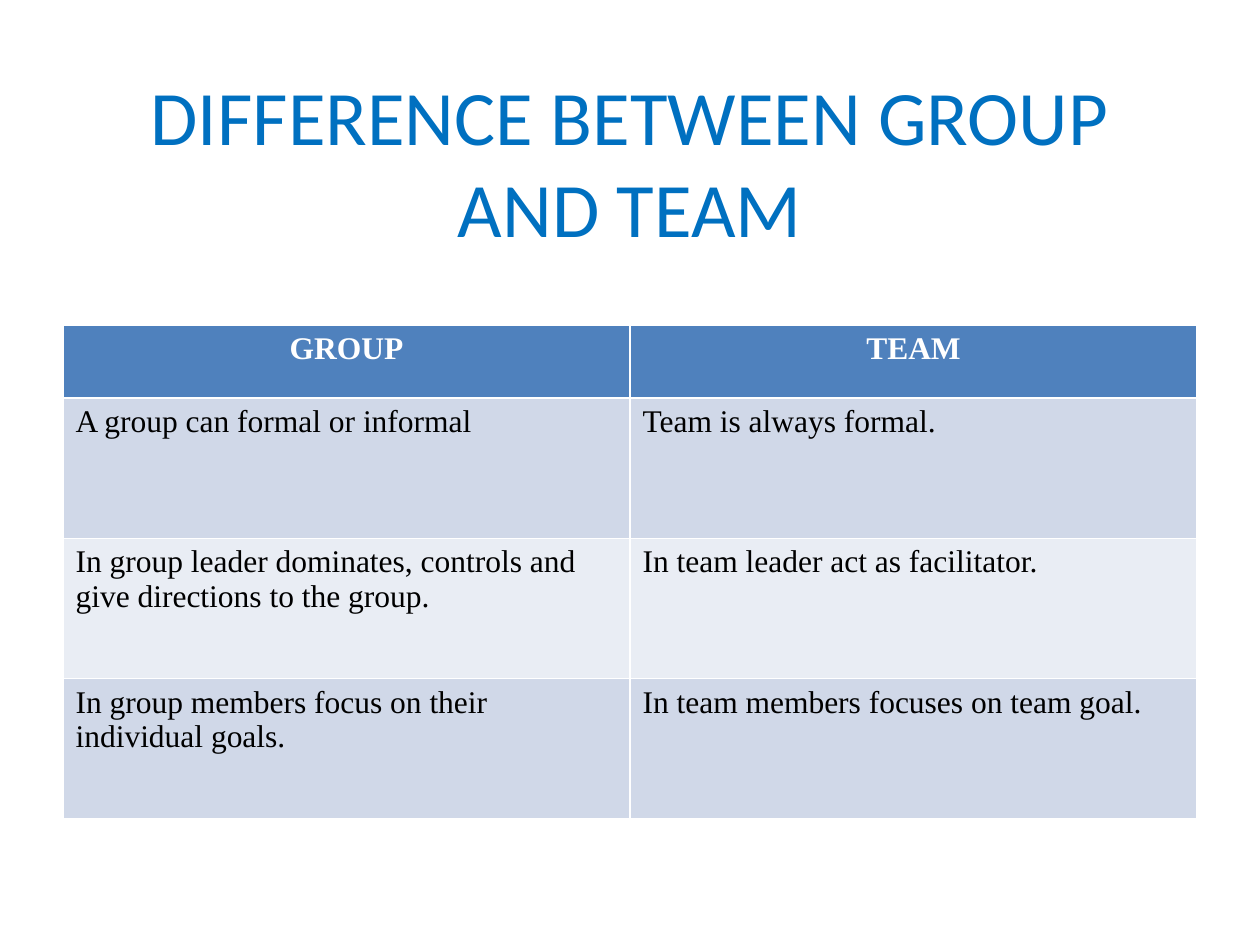
from pptx import Presentation
from pptx.dml.color import RGBColor
from pptx.enum import text
from pptx.util import Inches, Pt

COLORS = {
    "title": "0070C0",
    "header": "4F81BD",
    "header_text": "FFFFFF",
    "body_text": "000000",
    "odd_band": "D0D8E8",
    "even_band": "E9EDF4",
}
ROWS = [
    ("GROUP", "TEAM"),
    ("A group can formal or informal", "Team is always formal."),
    ("In group leader dominates, controls and give directions to the group.",
     "In team leader act as facilitator."),
    ("In group members focus on their individual goals.",
     "In team members focuses on team goal."),
]
HEADER_HEIGHT = Inches(0.58)


def style_paragraph(paragraph, font_name, size, color, bold=False, centered=False):
    """Set the font and alignment of a paragraph."""
    font = paragraph.font
    font.name, font.size, font.bold = font_name, Pt(size), bold
    font.color.rgb = RGBColor.from_string(COLORS[color])
    paragraph.alignment = text.PP_ALIGN.CENTER if centered else text.PP_ALIGN.LEFT


def add_title(slide, left, top, width, height):
    """Place the slide title in the given box."""
    title = slide.shapes.title
    title.left, title.top, title.width, title.height = left, top, width, height
    frame = title.text_frame
    frame.text = "DIFFERENCE BETWEEN GROUP AND TEAM"
    frame.word_wrap = True
    frame.vertical_anchor = text.MSO_ANCHOR.MIDDLE
    style_paragraph(frame.paragraphs[0], "Calibri", 44, "title", centered=True)


def add_comparison(slide, left, top, width, height):
    """Fill the given box with the banded group and team table."""
    table = slide.shapes.add_table(len(ROWS), len(ROWS[0]), left, top, width, height).table
    body_height = (height - HEADER_HEIGHT) // (len(ROWS) - 1)
    for row_index, words in enumerate(ROWS):
        is_header = row_index == 0
        band = "odd_band" if row_index % 2 else "even_band"
        table.rows[row_index].height = HEADER_HEIGHT if is_header else body_height
        for column_index, wording in enumerate(words):
            cell = table.cell(row_index, column_index)
            cell.text = wording
            cell.fill.solid()
            cell.fill.fore_color.rgb = RGBColor.from_string(
                COLORS["header" if is_header else band])
            style_paragraph(cell.text_frame.paragraphs[0], "Times New Roman", 18,
                            "header_text" if is_header else "body_text",
                            bold=is_header, centered=is_header)


def main():
    """Build and save the presentation."""
    presentation = Presentation()
    presentation.slide_width, presentation.slide_height = Inches(10), Inches(7.5)
    slide = presentation.slides.add_slide(presentation.slide_layouts[5])
    add_title(slide, Inches(0.5), Inches(0.3), Inches(9), Inches(1.95))
    add_comparison(slide, Inches(0.5), Inches(2.58), Inches(9), Inches(3.92))
    presentation.save("out.pptx")


if __name__ == "__main__":
    main()
